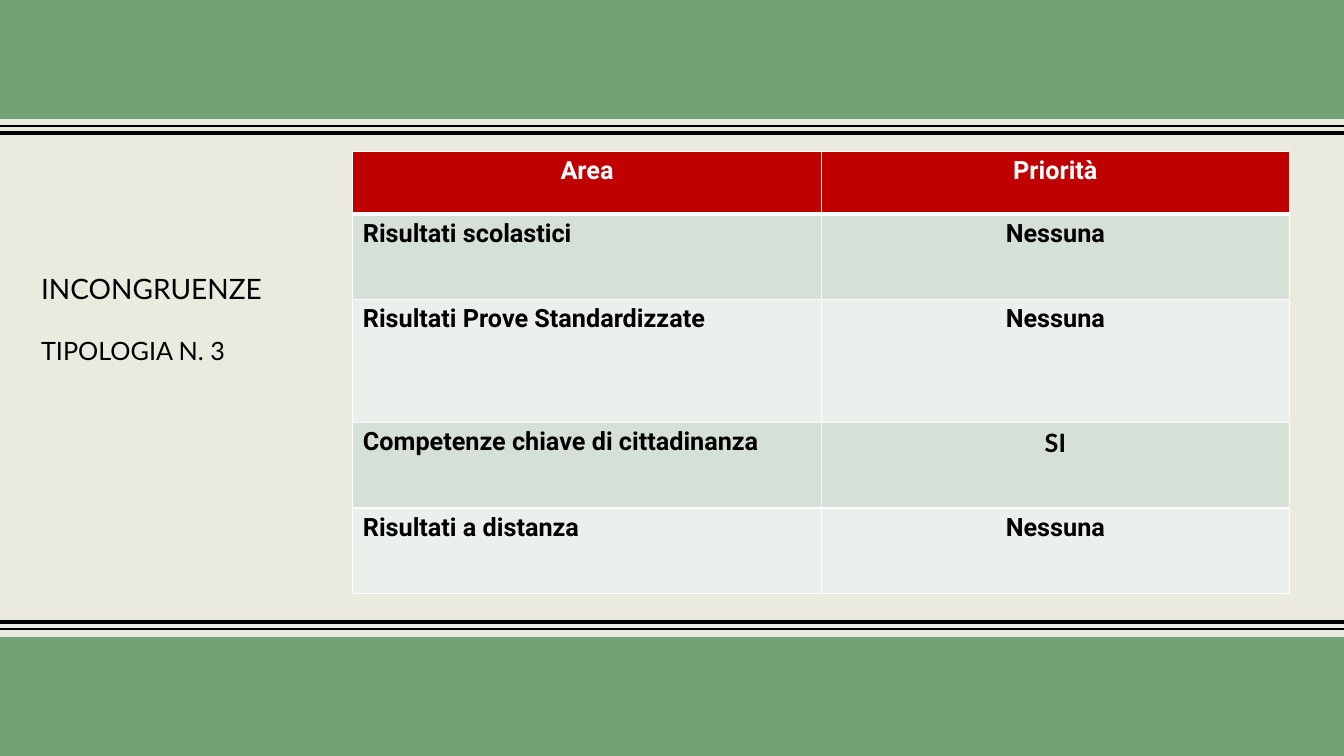
from dataclasses import dataclass

import lxml.etree
import pptx
import pptx.dml.color
import pptx.enum.shapes
import pptx.enum.text
import pptx.oxml.ns
import pptx.util

Inches = pptx.util.Inches
Pt = pptx.util.Pt
ALIGN = pptx.enum.text.PP_ALIGN

WIDTH, HEIGHT = 13.33, 7.5
BAND_HEIGHT = 1.18
COLORS = {
    "background": "EAEBDE",
    "band": "72A376",
    "header": "C00000",
    "odd_row": "D5E0D6",
    "even_row": "EBF0EC",
    "black": "000000",
    "white": "FFFFFF",
}


@dataclass
class Rule:
    y: float
    weight: float


@dataclass
class Row:
    area: str
    priority: str
    height: float
    priority_font: str = "Roboto"


RULES = [Rule(6.17, 3), Rule(6.24, 1), Rule(1.32, 3), Rule(1.25, 1)]
ROWS = [
    Row("Area", "Priorità", 0.62),
    Row("Risultati scolastici", "Nessuna", 0.85),
    Row("Risultati Prove Standardizzate", "Nessuna", 1.22),
    Row("Competenze chiave di cittadinanza", "SI", 0.85, "Lato"),
    Row("Risultati a distanza", "Nessuna", 0.85),
]


def color(name: str) -> pptx.dml.color.RGBColor:
    return pptx.dml.color.RGBColor.from_string(COLORS[name])


def style_font(paragraph, name: str, size: float, color_name: str, bold: bool = False) -> None:
    paragraph.font.name = name
    paragraph.font.size = Pt(size)
    paragraph.font.bold = bold
    paragraph.font.color.rgb = color(color_name)


def draw_rule(slide, rule: Rule) -> None:
    y = Inches(rule.y)
    connector = slide.shapes.add_connector(
        pptx.enum.shapes.MSO_CONNECTOR.STRAIGHT, 0, y, Inches(WIDTH), y)
    connector.line.color.rgb = color("black")
    connector.line.width = Pt(rule.weight)
    properties = connector._element.spPr
    lxml.etree.SubElement(properties, pptx.oxml.ns.qn("a:effectLst"))


def draw_band(slide, top: float) -> None:
    shape = slide.shapes.add_shape(
        pptx.enum.shapes.MSO_SHAPE.RECTANGLE,
        0, Inches(top), Inches(WIDTH), Inches(BAND_HEIGHT))
    shape.shadow.inherit = False
    shape.fill.solid()
    shape.fill.fore_color.rgb = color("band")
    shape.line.fill.background()


def draw_heading(slide) -> None:
    text_box = slide.shapes.add_textbox(Inches(0.31), Inches(2.64), Inches(2.73), Inches(1.04))
    frame = text_box.text_frame
    frame.word_wrap = True
    frame.text = "INCONGRUENZE\nTIPOLOGIA N. 3"
    for paragraph, size in zip(frame.paragraphs, (20, 18)):
        style_font(paragraph, "Lato", size, "black")
    frame.paragraphs[1].space_before = Pt(21.6)


def set_border(cell, side: str, weight: float) -> None:
    properties = cell._tc.get_or_add_tcPr()
    line = lxml.etree.SubElement(
        properties, pptx.oxml.ns.qn(f"a:ln{side}"), w=str(Pt(weight)))
    fill = lxml.etree.SubElement(line, pptx.oxml.ns.qn("a:solidFill"))
    lxml.etree.SubElement(fill, pptx.oxml.ns.qn("a:srgbClr"), val=COLORS["white"])


def draw_table(slide) -> None:
    frame = slide.shapes.add_table(
        len(ROWS), 2, Inches(3.5), Inches(1.5), Inches(9.29),
        Inches(sum(row.height for row in ROWS)))
    table = frame.table
    table.horz_banding = False
    for index, row in enumerate(ROWS):
        table.rows[index].height = Inches(row.height)
        is_header = index == 0
        fill_name = "header" if is_header else ("even_row", "odd_row")[index % 2]
        entries = ((row.area, "Roboto"), (row.priority, row.priority_font))
        for column, (text, font_name) in enumerate(entries):
            cell = table.cell(index, column)
            # The rule under the header is heavier, on both sides of the edge
            weights = {"L": 1, "R": 1, "T": 3 if index == 1 else 1, "B": 3 if is_header else 1}
            for side, weight in weights.items():
                set_border(cell, side, weight)
            cell.fill.solid()
            cell.fill.fore_color.rgb = color(fill_name)
            cell.text = text
            paragraph = cell.text_frame.paragraphs[0]
            paragraph.alignment = ALIGN.CENTER if is_header or column else ALIGN.LEFT
            style_font(paragraph, font_name, 18, "white" if is_header else "black", bold=True)


def main() -> None:
    presentation = pptx.Presentation()
    presentation.slide_width = Inches(WIDTH)
    presentation.slide_height = Inches(HEIGHT)
    slide = presentation.slides.add_slide(presentation.slide_layouts[6])

    # Background, rules and bands
    slide.background.fill.solid()
    slide.background.fill.fore_color.rgb = color("background")
    for rule in RULES:
        draw_rule(slide, rule)
    for top in (HEIGHT - BAND_HEIGHT, 0):
        draw_band(slide, top)

    # Content
    draw_heading(slide)
    draw_table(slide)
    presentation.save("out.pptx")


if __name__ == "__main__":
    main()
